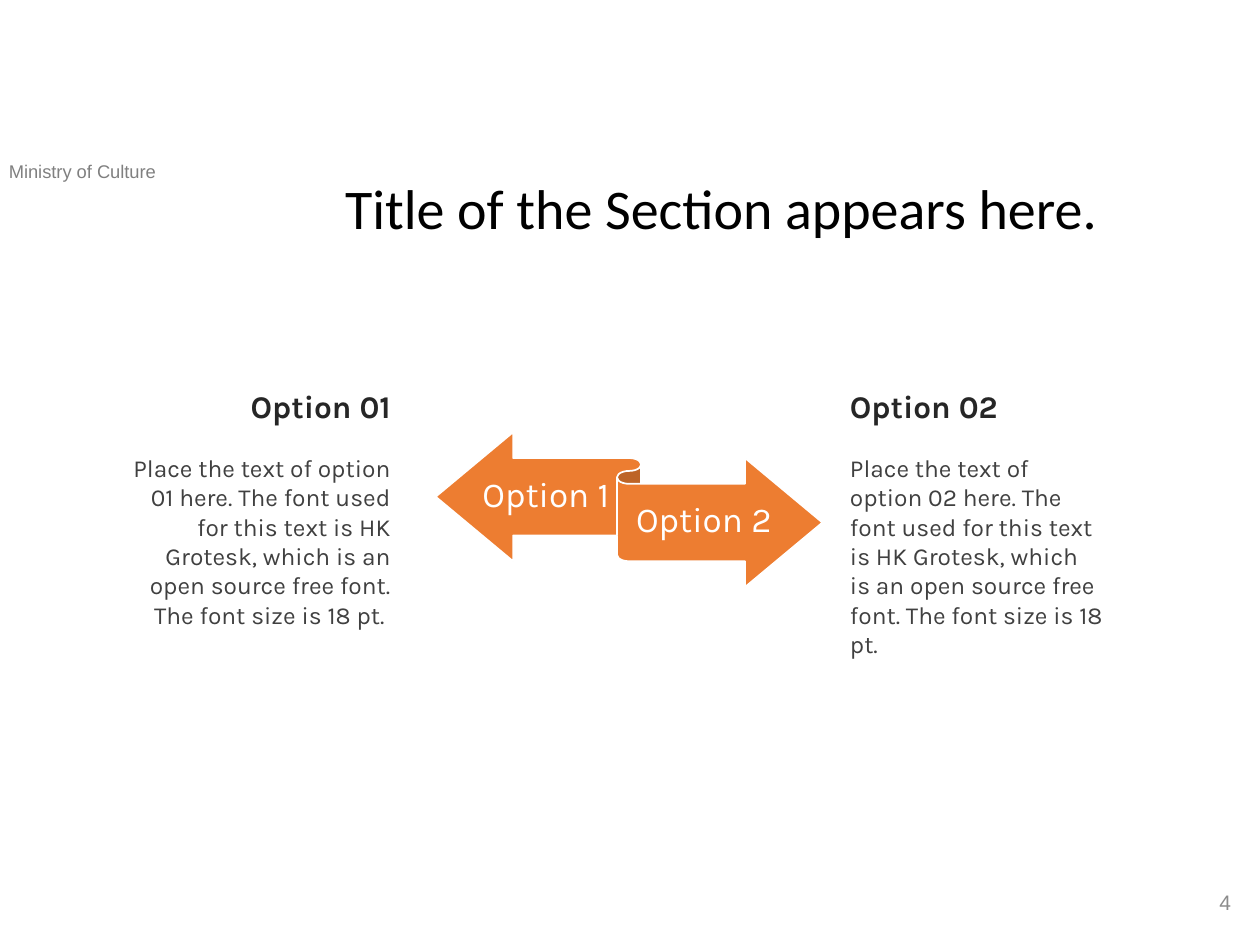
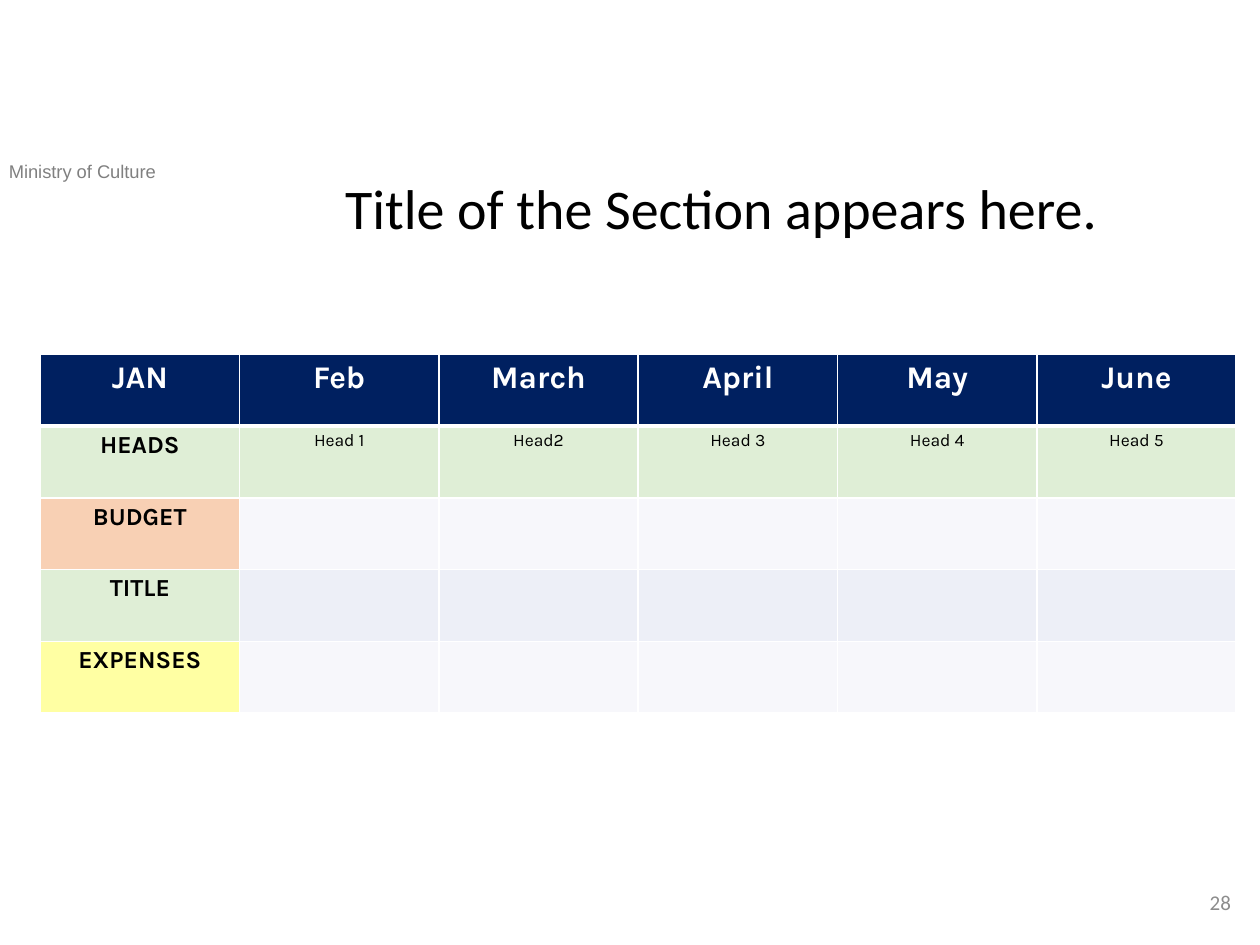
"""Build the option-comparison and monthly-budget slides."""
from dataclasses import dataclass
from typing import NamedTuple

from lxml.etree import SubElement
from pptx import Presentation
from pptx.dml.color import RGBColor
from pptx.enum.shapes import MSO_SHAPE
from pptx.enum.text import MSO_ANCHOR, MSO_AUTO_SIZE, PP_ALIGN
from pptx.oxml.ns import qn
from pptx.util import Pt


@dataclass(frozen=True)
class Theme:
    """Fonts, type sizes and colours of the deck."""
    title_font: str = "Calibri"
    body_font: str = "Karla"
    footer_font: str = "Arial"
    title_size: float = 32
    label_size: float = 20
    heading_size: float = 18
    text_size: float = 14
    number_size: float = 12
    ministry_size: float = 10.5
    small_size: float = 10
    white: str = "FFFFFF"
    black: str = "000000"
    heading: str = "262626"
    text: str = "404040"
    ministry: str = "808080"
    number: str = "8C8C8C"
    orange: str = "ED7D31"
    navy: str = "002060"
    green: str = "A9D18E"
    yellow: str = "FFFF00"
    light_band: str = "E9EBF5"
    dark_band: str = "CFD5EA"
    tint: int = 36


THEME = Theme()


class Box(NamedTuple):
    """Place and size in points."""
    left: float
    top: float
    width: float
    height: float


class Style(NamedTuple):
    """Look of a run."""
    font: str
    size: float
    color: str
    bold: bool = False


class Option(NamedTuple):
    """One option: its arrow label and its description column."""
    label: str
    label_box: Box
    heading: str
    text: str
    text_box: Box
    align: PP_ALIGN


class BudgetRow(NamedTuple):
    """One table row: its title, entries and fills."""
    title: str
    entries: tuple[str, ...]
    title_fill: str
    entry_fill: str


TITLE_STYLE = Style(THEME.title_font, THEME.title_size, THEME.black)
LABEL_STYLE = Style(THEME.body_font, THEME.label_size, THEME.white)
HEADING_STYLE = Style(THEME.body_font, THEME.heading_size, THEME.heading, True)
TEXT_STYLE = Style(THEME.body_font, THEME.text_size, THEME.text)
MINISTRY_STYLE = Style(THEME.footer_font, THEME.ministry_size, THEME.ministry)
MONTH_STYLE = Style(THEME.body_font, THEME.heading_size, THEME.white, True)
ROW_TITLE_STYLE = Style(THEME.body_font, THEME.text_size, THEME.black, True)
ENTRY_STYLE = Style(THEME.body_font, THEME.small_size, THEME.black)

SECTION_TITLE = "Title of the Section appears here."
TITLE_BOX = Box(190, 100, 465, 57)
MINISTRY_BOX = Box(-2, 88, 157, 20)
NUMBER_BOX = Box(548.5, 501, 162, 29)
RIBBON_BOX = Box(249, 247, 221, 88.5)
TABLE_BOX = Box(23, 202.5, 683.4, 205)
HEADING_GAP = 16

OPTIONS = (
    Option("Option 1", Box(275.5, 262, 73, 43), "Option 01",
           "Place the text of option 01 here. The font used for this text is "
           "HK Grotesk, which is an open source free font. The font size is 18 pt. ",
           Box(66, 217.5, 164.5, 163.5), PP_ALIGN.RIGHT),
    Option("Option 2", Box(359, 276.5, 86.5, 43), "Option 02",
           "Place the text of option 02 here. The font used for this text is "
           "HK Grotesk, which is an open source free font. The font size is 18 pt.",
           Box(478.5, 217.5, 159.5, 163.5), PP_ALIGN.LEFT),
)

MONTHS = ("JAN", "Feb", "March", "April", "May", "June")
BUDGET_ROWS = (
    BudgetRow("HEADS", ("Head 1", "Head2", "Head 3", "Head 4", "Head 5"),
              THEME.green, THEME.green),
    BudgetRow("BUDGET", ("",) * 5, THEME.orange, THEME.light_band),
    BudgetRow("TITLE", ("",) * 5, THEME.green, THEME.dark_band),
    BudgetRow("EXPENSES", ("",) * 5, THEME.yellow, THEME.light_band),
)


def rgb(color: str) -> RGBColor:
    """Turn a hex colour into an RGBColor."""
    return RGBColor.from_string(color)


def in_points(box: Box) -> tuple:
    """Give the four lengths of a box as Pt."""
    return tuple(Pt(length) for length in box)


def write(paragraph, text: str, style: Style, align: PP_ALIGN = PP_ALIGN.LEFT) -> None:
    """Add a styled run to an aligned paragraph."""
    paragraph.alignment = align
    run = paragraph.add_run()
    run.text = text
    run.font.name = style.font
    run.font.size = Pt(style.size)
    run.font.bold = style.bold
    run.font.color.rgb = rgb(style.color)


def add_label(slide, box: Box, text: str, style: Style, align: PP_ALIGN = PP_ALIGN.LEFT,
              anchor: MSO_ANCHOR = MSO_ANCHOR.MIDDLE):
    """Add a one-paragraph text box."""
    label = slide.shapes.add_textbox(*in_points(box))
    label.text_frame.word_wrap = True
    label.text_frame.vertical_anchor = anchor
    write(label.text_frame.paragraphs[0], text, style, align)
    return label


def move_placeholder(placeholder, box: Box):
    """Place a placeholder and return its top-anchored text frame."""
    placeholder.left, placeholder.top, placeholder.width, placeholder.height = in_points(box)
    frame = placeholder.text_frame
    frame.word_wrap = True
    frame.auto_size = MSO_AUTO_SIZE.NONE
    frame.vertical_anchor = MSO_ANCHOR.TOP
    return frame


def add_section_slide(deck, layout_name: str, number: str, number_font: str):
    """Add a slide with the section title and its page number."""
    slide = deck.slides.add_slide(deck.slide_layouts.get_by_name(layout_name))
    heading = move_placeholder(slide.shapes.title, TITLE_BOX).paragraphs[0]
    heading.line_spacing = 0.9
    write(heading, SECTION_TITLE, TITLE_STYLE)
    add_label(slide, NUMBER_BOX, number,
              Style(number_font, THEME.number_size, THEME.number), PP_ALIGN.RIGHT)
    return slide


def add_ministry_to_master(deck, slide) -> None:
    """Put the ministry line on the slide master."""
    ministry = add_label(slide, MINISTRY_BOX, "Ministry of Culture", MINISTRY_STYLE,
                         anchor=MSO_ANCHOR.TOP)
    ministry._element.nvSpPr.cNvPr.id = 20
    deck.slide_master.shapes._spTree.append(ministry._element)


def add_option_paragraph(paragraph, text: str, style: Style, align: PP_ALIGN, gap: float) -> None:
    """Write an unbulleted paragraph with a gap above it."""
    properties = paragraph._p.get_or_add_pPr()
    properties.set("marL", "0")
    properties.set("indent", "0")
    SubElement(properties, qn("a:buNone"))
    paragraph.space_before = Pt(gap)
    write(paragraph, text, style, align)


def add_ribbon(slide) -> None:
    """Draw the two-way ribbon."""
    ribbon = slide.shapes.add_shape(MSO_SHAPE.LEFT_RIGHT_RIBBON, *in_points(RIBBON_BOX))
    ribbon.shadow.inherit = False
    ribbon.fill.solid()
    ribbon.fill.fore_color.rgb = rgb(THEME.orange)
    ribbon.line.color.rgb = rgb(THEME.white)
    ribbon.line.width = Pt(1)


def add_option(slide, placeholder, option: Option) -> None:
    """Add the arrow label and description of an option."""
    label = add_label(slide, option.label_box, option.label, LABEL_STYLE, PP_ALIGN.CENTER)
    label.text_frame.margin_left = label.text_frame.margin_right = 0
    label.text_frame.paragraphs[0].line_spacing = 0.9
    frame = move_placeholder(placeholder, option.text_box)
    add_option_paragraph(frame.paragraphs[0], option.heading, HEADING_STYLE, option.align, 0)
    add_option_paragraph(frame.add_paragraph(), option.text, TEXT_STYLE, option.align, HEADING_GAP)


def set_borders(cell, top: float, bottom: float) -> None:
    """Give a cell white borders."""
    properties = cell._tc.get_or_add_tcPr()
    for position, (side, width) in enumerate(
            (("lnL", 1), ("lnR", 1), ("lnT", top), ("lnB", bottom))):
        border = SubElement(properties, qn(f"a:{side}"), w=str(Pt(width)))
        fill = SubElement(border, qn("a:solidFill"))
        SubElement(fill, qn("a:srgbClr"), val=THEME.white)
        properties.insert(position, border)


def fill_cell(cell, text: str, style: Style, color: str, opacity: int = 100) -> None:
    """Set the fill, margins and centred text of a cell."""
    cell.fill.solid()
    cell.fill.fore_color.rgb = rgb(color)
    if opacity < 100:
        shade = cell._tc.tcPr.find(f".//{qn('a:srgbClr')}")
        SubElement(shade, qn("a:alpha"), val=str(opacity * 1000))
    cell.margin_left = cell.margin_right = Pt(5.2)
    cell.margin_top = cell.margin_bottom = Pt(2.7)
    if text:
        write(cell.text_frame.paragraphs[0], text, style, PP_ALIGN.CENTER)


def add_budget_table(slide) -> None:
    """Draw the monthly budget table."""
    table = slide.shapes.add_table(len(BUDGET_ROWS) + 1, len(MONTHS), *in_points(TABLE_BOX)).table
    table.horz_banding = False
    for column, month in enumerate(MONTHS):
        header = table.cell(0, column)
        fill_cell(header, month, MONTH_STYLE, THEME.navy)
        set_borders(header, 1, 3)
    for index, row in enumerate(BUDGET_ROWS, start=1):
        for column, text in enumerate((row.title, *row.entries)):
            cell = table.cell(index, column)
            style, color = ((ENTRY_STYLE, row.entry_fill) if column
                            else (ROW_TITLE_STYLE, row.title_fill))
            fill_cell(cell, text, style, color, THEME.tint)
            set_borders(cell, 3 if index == 1 else 1, 1)


def main() -> None:
    """Build and save the deck."""
    deck = Presentation()
    deck.slide_width, deck.slide_height = Pt(720), Pt(540)

    comparison = add_section_slide(deck, "Two Content", "4", THEME.footer_font)
    add_ministry_to_master(deck, comparison)
    add_ribbon(comparison)
    for index, option in enumerate(OPTIONS, start=1):
        add_option(comparison, comparison.placeholders[index], option)

    budget = add_section_slide(deck, "Title Only", "28", THEME.title_font)
    add_budget_table(budget)

    deck.save("out.pptx")


if __name__ == "__main__":
    main()
